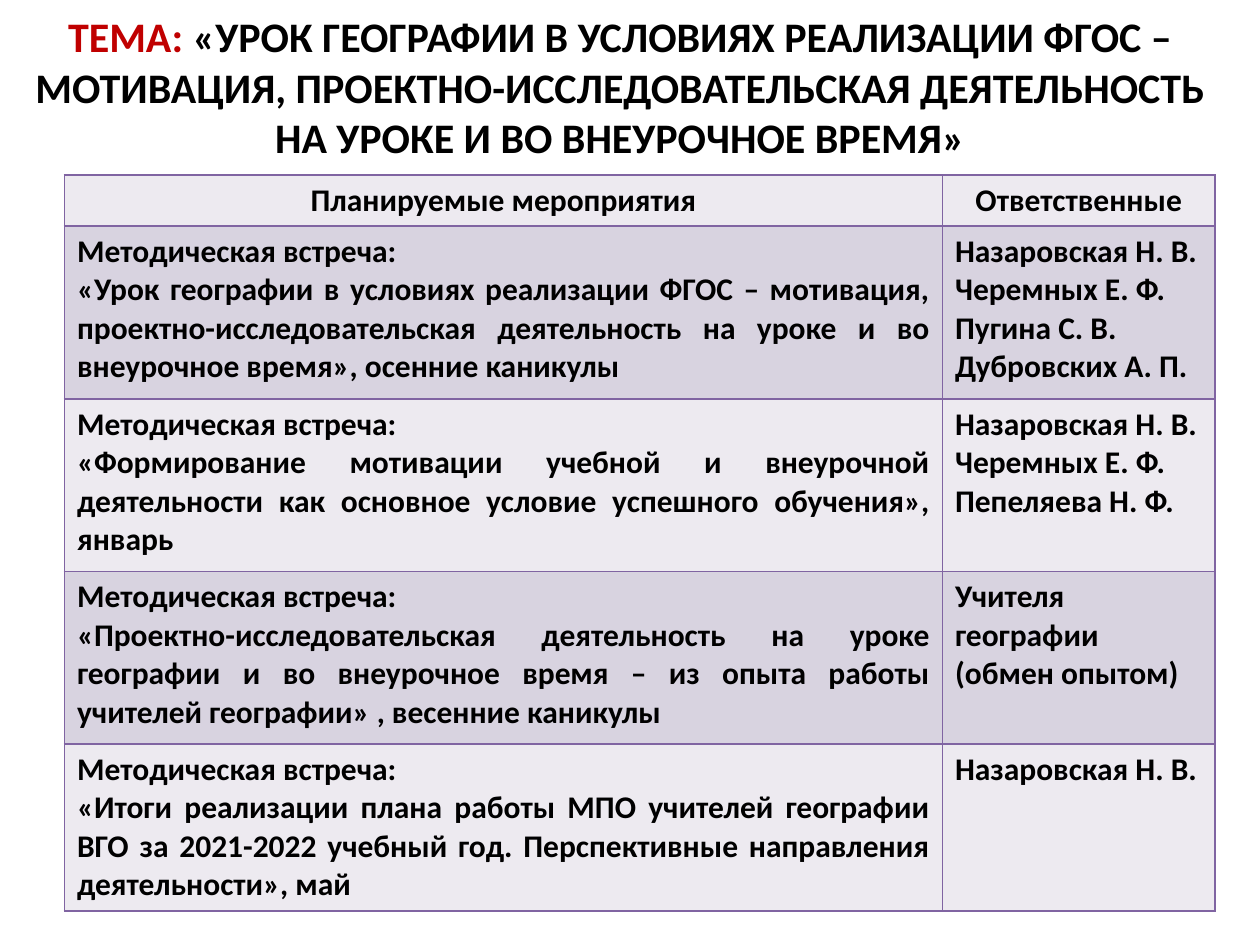
from lxml import etree
from pptx import Presentation
from pptx.dml.color import RGBColor
from pptx.enum.text import MSO_ANCHOR, MSO_AUTO_SIZE, PP_ALIGN
from pptx.oxml.ns import qn
from pptx.util import Cm, Pt

CENTER, JUSTIFY = PP_ALIGN.CENTER, PP_ALIGN.JUSTIFY
MIDDLE, NO_AUTOFIT = MSO_ANCHOR.MIDDLE, MSO_AUTO_SIZE.NONE
TITLE_ONLY = 5
FONT = "Calibri"
BLACK, RED, PURPLE = "000000", "C00000", "8064A2"
BAND_FILLS = ("EDEAF0", "D8D3E0")

COLUMN_WIDTHS = (17.7, 5.49)
ROW_HEIGHTS = (1, 3.48, 3.48, 3.48, 3.36)
HEADERS = ("Планируемые мероприятия", "Ответственные")
MEETING = "Методическая встреча:"
MEETINGS = (
    ("«Урок географии в условиях реализации ФГОС – мотивация, "
     "проектно-исследовательская деятельность на уроке и во "
     "внеурочное время», осенние каникулы",
     ("Назаровская Н. В.", "Черемных Е. Ф.", "Пугина С. В.", "Дубровских А. П.")),
    ("«Формирование мотивации учебной и внеурочной деятельности как "
     "основное условие успешного обучения», январь",
     ("Назаровская Н. В.", "Черемных Е. Ф.", "Пепеляева Н. Ф.")),
    ("«Проектно-исследовательская деятельность на уроке географии и во "
     "внеурочное время – из опыта работы учителей географии» , весенние каникулы",
     ("Учителя географии (обмен опытом)",)),
    ("«Итоги реализации плана работы МПО учителей географии ВГО за 2021-2022 "
     "учебный год. Перспективные направления деятельности», май",
     ("Назаровская Н. В.",)),
)


def color(hex_value):
    return RGBColor.from_string(hex_value)


def format_paragraph(paragraph, size, alignment):
    paragraph.alignment = alignment
    paragraph.font.name = FONT
    paragraph.font.size = Pt(size)
    paragraph.font.bold = True
    paragraph.font.color.rgb = color(BLACK)


def fill_title(title):
    title.left, title.top = Cm(0.3), Cm(0.76)
    title.width, title.height = Cm(24.4), Cm(1.96)
    frame = title.text_frame
    frame.auto_size = NO_AUTOFIT
    frame.vertical_anchor = MIDDLE
    paragraph = frame.paragraphs[0]
    format_paragraph(paragraph, 24, CENTER)
    label = paragraph.add_run()
    label.text = "ТЕМА: "
    label.font.color.rgb = color(RED)
    paragraph.add_run().text = (
        "«УРОК ГЕОГРАФИИ В УСЛОВИЯХ РЕАЛИЗАЦИИ ФГОС – МОТИВАЦИЯ, "
        "ПРОЕКТНО-ИССЛЕДОВАТЕЛЬСКАЯ ДЕЯТЕЛЬНОСТЬ НА УРОКЕ И ВО ВНЕУРОЧНОЕ ВРЕМЯ»")


def add_borders(cell):
    """Outline all four sides; call before filling, as the schema puts lines first."""
    properties = cell._tc.get_or_add_tcPr()
    for side in ("a:lnL", "a:lnR", "a:lnT", "a:lnB"):
        line = etree.SubElement(properties, qn(side), w=str(Pt(1)))
        solid_fill = etree.SubElement(line, qn("a:solidFill"))
        etree.SubElement(solid_fill, qn("a:srgbClr"), val=PURPLE)


def fill_cell(cell, lines, alignment, fill):
    add_borders(cell)
    cell.fill.solid()
    cell.fill.fore_color.rgb = color(fill)
    cell.text = "\n".join(lines)
    for paragraph in cell.text_frame.paragraphs:
        format_paragraph(paragraph, 18, alignment)


def add_plan_table(slide):
    table = slide.shapes.add_table(
        len(ROW_HEIGHTS), len(COLUMN_WIDTHS), Cm(1.3), Cm(3.53),
        Cm(sum(COLUMN_WIDTHS)), Cm(sum(ROW_HEIGHTS))).table
    for column, width in zip(table.columns, COLUMN_WIDTHS):
        column.width = Cm(width)
    for row, height in zip(table.rows, ROW_HEIGHTS):
        row.height = Cm(height)

    contents = [[(header,) for header in HEADERS]]
    contents += [[(MEETING, topic), people] for topic, people in MEETINGS]
    for row_index, row_contents in enumerate(contents):
        alignment = JUSTIFY if row_index else CENTER
        for column_index, lines in enumerate(row_contents):
            fill_cell(table.cell(row_index, column_index), lines, alignment,
                      BAND_FILLS[row_index % 2])


def main():
    presentation = Presentation()
    presentation.slide_width, presentation.slide_height = Cm(25.4), Cm(19.05)
    slide = presentation.slides.add_slide(presentation.slide_layouts[TITLE_ONLY])
    fill_title(slide.shapes.title)
    add_plan_table(slide)
    presentation.save("out.pptx")


if __name__ == "__main__":
    main()
